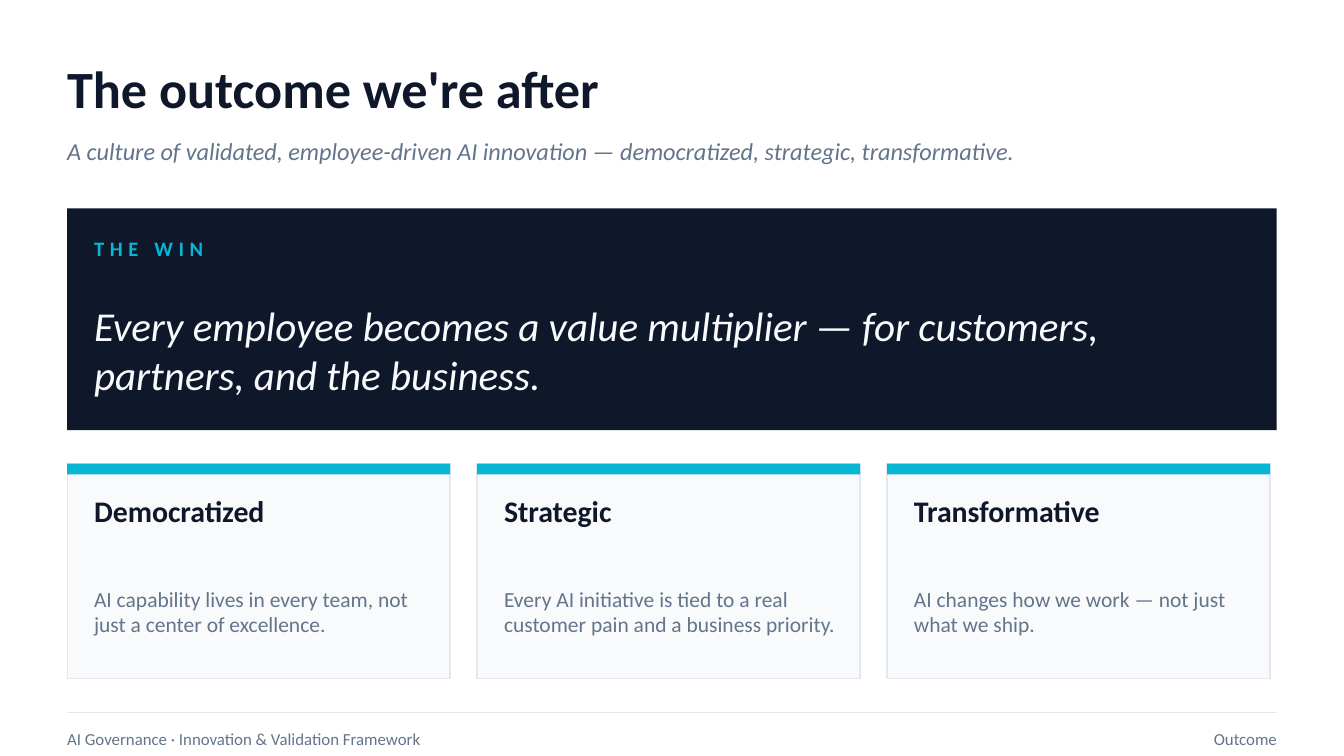
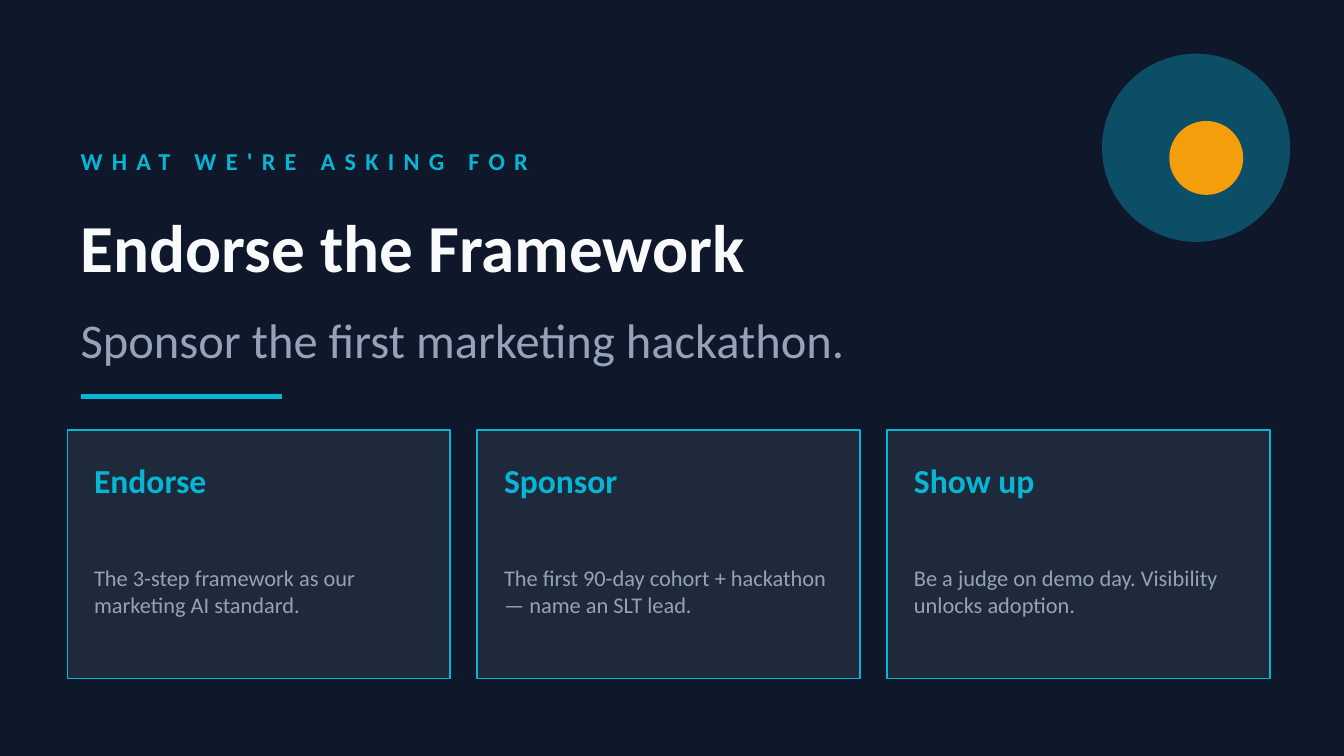
from lxml import etree
from pptx import Presentation, util as u
from pptx.dml.color import RGBColor
from pptx.enum import shapes, text
from pptx.oxml import ns

NAVY = RGBColor(0x0F, 0x17, 0x2A)
PANEL = RGBColor(0x1E, 0x29, 0x3B)
SLATE = RGBColor(0x64, 0x74, 0x8B)
MUTED = RGBColor(0x94, 0xA3, 0xB8)
RULE = RGBColor(0xE2, 0xE8, 0xF0)
PALE = RGBColor(0xF8, 0xFA, 0xFC)
WHITE = RGBColor(0xFF, 0xFF, 0xFF)
CYAN = RGBColor(0x06, 0xB6, 0xD4)
AMBER = RGBColor(0xF5, 0x9E, 0x0B)

# Grid of square cells: 200 columns by 112.5 rows
COLUMNS, ROWS = 200, 112.5
CELL = u.Inches(10) // COLUMNS
MARGIN, CONTENT = 10, 180
CARD_WIDTH, CARD_STEP, CARD_PAD = 57, 61, 4


def cells(*counts):
    return [u.Emu(round(count * CELL)) for count in counts]


class Painter:
    """Holds the style and draws on the current page."""

    font = "Calibri"

    def __init__(self):
        self.deck = Presentation()
        self.deck.slide_width, self.deck.slide_height = cells(COLUMNS, ROWS)
        self.page = None

    def new_page(self, color):
        self.page = self.deck.slides.add_slide(self.deck.slide_layouts[6])
        fill = self.page.background.fill
        fill.solid()
        fill.fore_color.rgb = color

    def label(self, words, place, size, color, bold=False, italic=False,
              spacing=0, align=text.PP_ALIGN.LEFT):
        frame = self.page.shapes.add_textbox(*cells(*place)).text_frame
        frame.word_wrap = True
        frame.vertical_anchor = text.MSO_ANCHOR.MIDDLE
        frame.margin_left = frame.margin_right = 0
        frame.margin_top = frame.margin_bottom = 0
        para = frame.paragraphs[0]
        para.alignment = align
        span = para.add_run()
        span.text = words
        font = para.font
        font.name, font.size = self.font, u.Pt(size)
        font.bold, font.italic = bold, italic
        font.color.rgb = color
        if spacing:
            span.font._element.set("spc", str(spacing * 100))

    def shape(self, place, color, border=None, kind=shapes.MSO_SHAPE.RECTANGLE,
              opacity=100):
        box = self.page.shapes.add_shape(kind, *cells(*place))
        box.shadow.inherit = False
        box.fill.solid()
        box.fill.fore_color.rgb = color
        if opacity < 100:
            tint = box._element.spPr.find(".//" + ns.qn("a:srgbClr"))
            etree.SubElement(tint, ns.qn("a:alpha"), val=str(opacity * 1000))
        if border is None:
            box.line.fill.background()
        else:
            box.line.color.rgb = border
            box.line.width = u.Pt(0.75)

    def circle(self, left, top, size, color, opacity=100):
        self.shape((left, top, size, size), color,
                   kind=shapes.MSO_SHAPE.OVAL, opacity=opacity)

    def rule(self, left, top, width, color, weight):
        line = self.page.shapes.add_connector(
            shapes.MSO_CONNECTOR.STRAIGHT, *cells(left, top, left + width, top))
        line.line.color.rgb = color
        line.line.width = u.Pt(weight)
        etree.SubElement(line._element.spPr, ns.qn("a:effectLst"))

    def title(self, words, subtitle):
        self.label(words, (MARGIN, 7, CONTENT, 12), 28, NAVY, bold=True)
        self.label(subtitle, (MARGIN, 19, CONTENT, 7), 13, SLATE, italic=True)

    def footer(self, left_words, right_words):
        self.rule(MARGIN, 106, CONTENT, RULE, 0.75)
        self.label(left_words, (MARGIN, 107, 110, 6), 9, SLATE)
        self.label(right_words, (120, 107, 70, 6), 9, SLATE,
                   align=text.PP_ALIGN.RIGHT)

    def cards(self, entries, top, height, fill, border, head, body, band=None):
        """head and body each give row count, text size and colour."""
        head_rows, head_size, head_color = head
        body_rows, body_size, body_color = body
        head_top = top + 3
        body_top = head_top + head_rows + 1
        for index, (heading, detail) in enumerate(entries):
            left = MARGIN + index * CARD_STEP
            inner, width = left + CARD_PAD, CARD_WIDTH - 6
            self.shape((left, top, CARD_WIDTH, height), fill, border)
            if band is not None:
                self.shape((left, top, CARD_WIDTH, 1.6), band)
            self.label(heading, (inner, head_top, width, head_rows),
                       head_size, head_color, bold=True)
            self.label(detail, (inner, body_top, width, body_rows),
                       body_size, body_color)


def outcome(painter):
    painter.new_page(WHITE)
    painter.title("The outcome we're after",
                  "A culture of validated, employee-driven AI innovation — "
                  "democratized, strategic, transformative.")
    # Statement panel
    painter.shape((MARGIN, 31, CONTENT, 33), NAVY)
    painter.label("THE WIN", (14, 34, 160, 6), 11, CYAN, bold=True, spacing=3)
    painter.label("Every employee becomes a value multiplier — for customers, "
                  "partners, and the business.",
                  (14, 41, 172, 22), 22, PALE, italic=True)
    # Three qualities
    painter.cards([
        ("Democratized", "AI capability lives in every team, not just a "
                         "center of excellence."),
        ("Strategic", "Every AI initiative is tied to a real customer pain "
                      "and a business priority."),
        ("Transformative", "AI changes how we work — not just what we ship."),
    ], 69, 32, PALE, RULE, (8, 16, NAVY), (20, 11.5, SLATE), band=CYAN)
    painter.footer("AI Governance · Innovation & Validation Framework", "Outcome")


def request(painter):
    painter.new_page(NAVY)
    # Corner ornament
    painter.circle(164, 8, 28, CYAN, opacity=35)
    painter.circle(174, 18, 11, AMBER)
    # Headline
    painter.label("WHAT WE'RE ASKING FOR", (12, 20, 120, 8), 13, CYAN,
                  bold=True, spacing=5)
    painter.label("Endorse the Framework", (12, 28, CONTENT, 17), 36, PALE,
                  bold=True)
    painter.label("Sponsor the first marketing hackathon.",
                  (12, 45, CONTENT, 11), 26, MUTED)
    painter.rule(12, 59, 30, CYAN, 2.5)
    # Three requests
    painter.cards([
        ("Endorse", "The 3-step framework as our marketing AI standard."),
        ("Sponsor", "The first 90-day cohort + hackathon — name an SLT lead."),
        ("Show up", "Be a judge on demo day. Visibility unlocks adoption."),
    ], 64, 37, PANEL, CYAN, (9, 18, CYAN), (22, 12, MUTED))


def main():
    painter = Painter()
    outcome(painter)
    request(painter)
    painter.deck.save("out.pptx")


if __name__ == "__main__":
    main()
